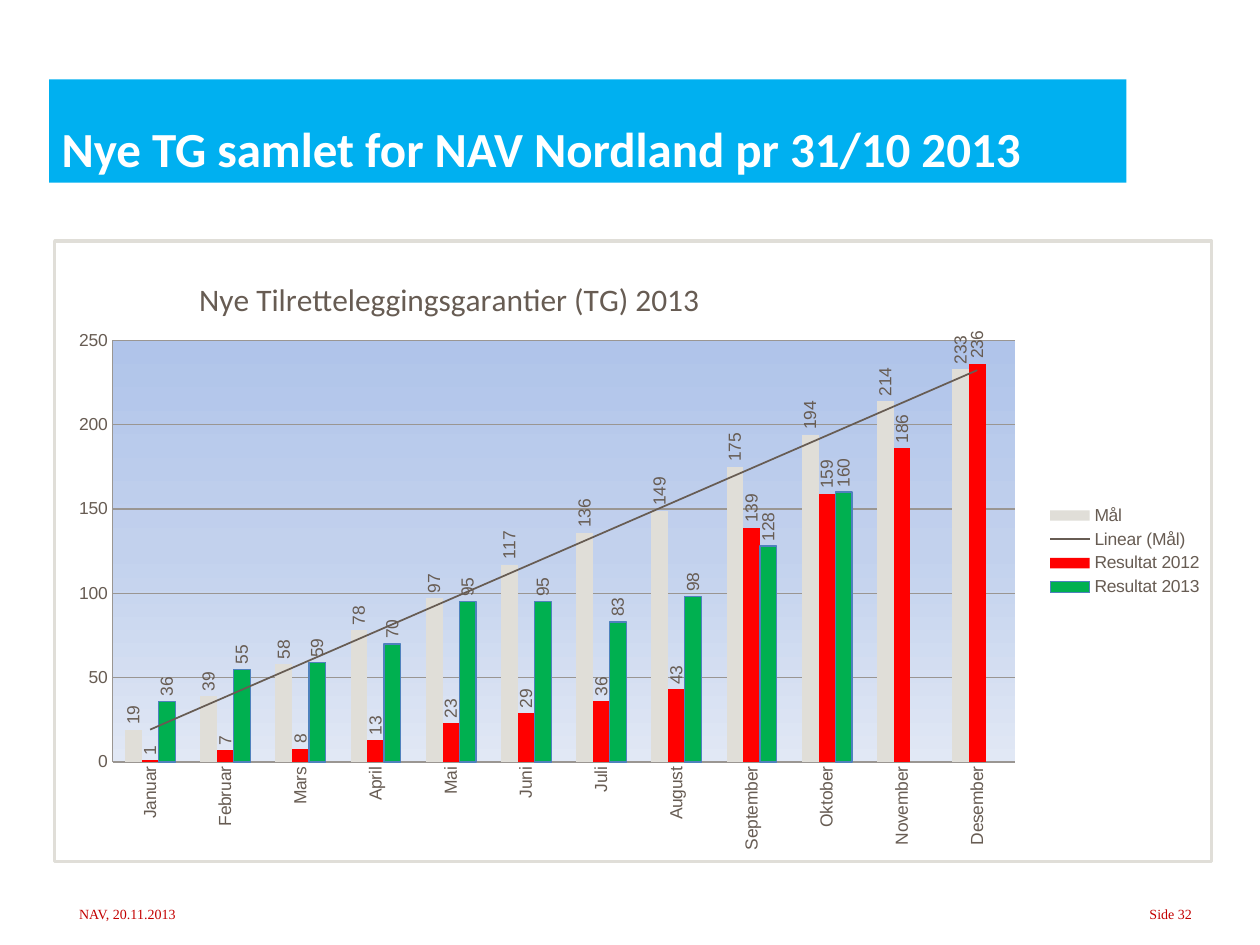
from dataclasses import dataclass
from typing import Optional

from lxml import etree
from pptx import Presentation
from pptx.chart.data import CategoryChartData
from pptx.dml.color import RGBColor
from pptx.enum.chart import XL_CHART_TYPE, XL_LABEL_POSITION, XL_LEGEND_POSITION, XL_TICK_MARK
from pptx.enum.shapes import MSO_SHAPE
from pptx.enum.text import MSO_ANCHOR, PP_ALIGN
from pptx.oxml import parse_xml
from pptx.oxml.ns import qn
from pptx.util import Inches, Pt

CLUSTERED = XL_CHART_TYPE.COLUMN_CLUSTERED
OUTSIDE_END = XL_LABEL_POSITION.OUTSIDE_END
LEGEND_RIGHT = XL_LEGEND_POSITION.RIGHT
NO_TICK = XL_TICK_MARK.NONE
RECTANGLE = MSO_SHAPE.RECTANGLE
BOTTOM = MSO_ANCHOR.BOTTOM
LEFT, RIGHT = PP_ALIGN.LEFT, PP_ALIGN.RIGHT

WHITE = RGBColor(0xFF, 0xFF, 0xFF)
BANNER_BLUE = RGBColor(0x00, 0xB0, 0xF0)
FOOTER_RED = RGBColor(0xC3, 0x00, 0x00)
TEXT_BROWN = RGBColor(0x67, 0x5C, 0x53)
GRID_GRAY = RGBColor(0x9A, 0x96, 0x92)
TARGET_GRAY = RGBColor(0xE0, 0xDE, 0xD8)
RESULT_RED = RGBColor(0xFF, 0x00, 0x00)
RESULT_GREEN = RGBColor(0x00, 0xB0, 0x50)
OUTLINE_BLUE = RGBColor(0x4F, 0x81, 0xBD)

NAMESPACES = (
    'xmlns:c="http://schemas.openxmlformats.org/drawingml/2006/chart" '
    'xmlns:a="http://schemas.openxmlformats.org/drawingml/2006/main"'
)
MONTHS = ["Januar", "Februar", "Mars", "April", "Mai", "Juni", "Juli",
          "August", "September", "Oktober", "November", "Desember"]


@dataclass
class Series:
    name: str
    values: list[Optional[int]]
    color: RGBColor
    outline: Optional[RGBColor] = None


@dataclass
class Footer:
    text: str
    left: float
    width: float
    alignment: PP_ALIGN


SERIES = [
    Series("Mål", [19, 39, 58, 78, 97, 117, 136, 149, 175, 194, 214, 233], TARGET_GRAY),
    Series("Resultat 2012", [1, 7, 8, 13, 23, 29, 36, 43, 139, 159, 186, 236], RESULT_RED),
    Series("Resultat 2013", [36, 55, 59, 70, 95, 95, 83, 98, 128, 160, None, None],
           RESULT_GREEN, OUTLINE_BLUE),
]
FOOTERS = [
    Footer("NAV, 20.11.2013", 0.53, 1, LEFT),
    Footer("Side 32", 9, 0.56, RIGHT),
]


def add_run(paragraph, text: str, font_name: str, size: float, color: RGBColor,
            bold: bool = False) -> None:
    run = paragraph.add_run()
    run.text = text
    run.font.name = font_name
    run.font.size = Pt(size)
    run.font.bold = bold
    run.font.color.rgb = color


def add_footer(slide, footer: Footer) -> None:
    shape = slide.shapes.add_textbox(Inches(footer.left), Inches(7.14),
                                     Inches(footer.width), Inches(0.23))
    paragraph = shape.text_frame.paragraphs[0]
    paragraph.alignment = footer.alignment
    add_run(paragraph, footer.text, "Times New Roman", 8, FOOTER_RED)


def add_banner(slide, text: str) -> None:
    shape = slide.shapes.add_shape(RECTANGLE, Inches(0.39), Inches(0.63),
                                   Inches(8.55), Inches(0.82))
    shape.shadow.inherit = False
    shape.fill.solid()
    shape.fill.fore_color.rgb = BANNER_BLUE
    shape.line.fill.background()
    shape.text_frame.word_wrap = True
    shape.text_frame.vertical_anchor = BOTTOM
    paragraph = shape.text_frame.paragraphs[0]
    paragraph.alignment = LEFT
    paragraph.line_spacing = 0.8
    add_run(paragraph, text, "Calibri", 28, WHITE, True)


def make_layout(x: float, y: float, width: Optional[float] = None,
                height: Optional[float] = None, inner: bool = False) -> etree.ElementBase:
    target = '<c:layoutTarget val="inner"/>' if inner else ""
    size = f'<c:w val="{width}"/><c:h val="{height}"/>' if width else ""
    return parse_xml(
        f'<c:layout {NAMESPACES}><c:manualLayout>{target}<c:xMode val="edge"/>'
        f'<c:yMode val="edge"/><c:x val="{x}"/><c:y val="{y}"/>{size}'
        '</c:manualLayout></c:layout>')


def set_layout(parent, layout, previous_tag: Optional[str] = None) -> None:
    for old_layout in parent.findall(qn("c:layout")):
        parent.remove(old_layout)
    if previous_tag:
        parent.find(qn(previous_tag)).addnext(layout)
    else:
        parent.insert(0, layout)


def turn_text(element) -> None:
    body = element.find(qn("c:txPr")).find(qn("a:bodyPr"))
    body.set("rot", "-5400000")
    body.set("vert", "horz")


def style_series(chart_series, series: Series) -> None:
    chart_series.format.fill.solid()
    chart_series.format.fill.fore_color.rgb = series.color
    if series.outline:
        chart_series.format.line.color.rgb = series.outline
        chart_series.format.line.width = Pt(0.75)
    else:
        chart_series.format.line.fill.background()
    labels = chart_series.data_labels
    labels.show_value = True
    labels.position = OUTSIDE_END
    labels.font.size = Pt(10)
    labels.font.color.rgb = TEXT_BROWN
    turn_text(chart_series._element.find(qn("c:dLbls")))


def style_axes(chart) -> None:
    for axis in (chart.category_axis, chart.value_axis):
        axis.major_tick_mark = axis.minor_tick_mark = NO_TICK
        axis.format.line.color.rgb = GRID_GRAY
        axis.tick_labels.font.size = Pt(10)
    turn_text(chart.category_axis._element)
    value_axis = chart.value_axis
    value_axis.minimum_scale, value_axis.maximum_scale, value_axis.major_unit = 0, 250, 50
    value_axis.major_gridlines.format.line.color.rgb = GRID_GRAY


def style_areas(chart) -> None:
    stops = "".join(
        f'<a:gs pos="{position}"><a:srgbClr val="{color}"/></a:gs>'
        for position, color in ((0, "B0C4EA"), (50000, "C2D1ED"), (100000, "E1E8F5")))
    plot_area = chart.element.find(qn("c:chart")).find(qn("c:plotArea"))
    set_layout(plot_area, make_layout(0.05, 0.16, 0.78, 0.68, True))
    plot_area.append(parse_xml(
        f'<c:spPr {NAMESPACES}><a:gradFill><a:gsLst>{stops}</a:gsLst>'
        '<a:lin ang="5400000" scaled="0"/></a:gradFill><a:ln><a:noFill/></a:ln></c:spPr>'))
    chart.element.find(qn("c:chart")).addnext(parse_xml(
        f'<c:spPr {NAMESPACES}><a:solidFill><a:srgbClr val="{WHITE}"/></a:solidFill>'
        f'<a:ln w="{Pt(2)}"><a:solidFill><a:srgbClr val="{TARGET_GRAY}"/></a:solidFill>'
        '</a:ln></c:spPr>'))


def add_trend_line(chart_series) -> None:
    chart_series._element.find(qn("c:dLbls")).addnext(parse_xml(
        f'<c:trendline {NAMESPACES}><c:spPr><a:ln w="{Pt(1)}"><a:solidFill>'
        f'<a:srgbClr val="{TEXT_BROWN}"/></a:solidFill></a:ln></c:spPr>'
        '<c:trendlineType val="linear"/><c:dispRSqr val="0"/><c:dispEq val="0"/>'
        '</c:trendline>'))


def add_results_chart(slide) -> None:
    chart_data = CategoryChartData()
    chart_data.categories = MONTHS
    for series in SERIES:
        chart_data.add_series(series.name, series.values)
    chart = slide.shapes.add_chart(CLUSTERED, Inches(0.42), Inches(1.9),
                                   Inches(9.21), Inches(4.95), chart_data).chart
    chart.font.name = "Arial"
    chart.font.size = Pt(10)
    chart.font.color.rgb = TEXT_BROWN
    chart.has_title = True
    add_run(chart.chart_title.text_frame.paragraphs[0],
            "Nye Tilretteleggingsgarantier (TG) 2013", "Calibri", 18, TEXT_BROWN)
    set_layout(chart.chart_title._element, make_layout(0.12, 0.05), "c:tx")
    chart.has_legend = True
    chart.legend.position = LEGEND_RIGHT
    chart.legend.include_in_layout = False
    set_layout(chart.legend._element, make_layout(0.85, 0.42, 0.15, 0.16), "c:legendPos")
    plot = chart.plots[0]
    plot.vary_by_categories = False
    plot.gap_width, plot.overlap = 150, 0
    for chart_series, series in zip(plot.series, SERIES):
        style_series(chart_series, series)
    add_trend_line(plot.series[0])
    style_axes(chart)
    style_areas(chart)


def main() -> None:
    """Build the slide of monthly guarantees against target and save it."""
    presentation = Presentation()
    presentation.slide_width, presentation.slide_height = Inches(10), Inches(7.5)
    slide = presentation.slides.add_slide(presentation.slide_layouts[6])
    for footer in FOOTERS:
        add_footer(slide, footer)
    add_banner(slide, "Nye TG samlet for NAV Nordland pr 31/10 2013")
    add_results_chart(slide)
    presentation.save("out.pptx")


if __name__ == "__main__":
    main()
